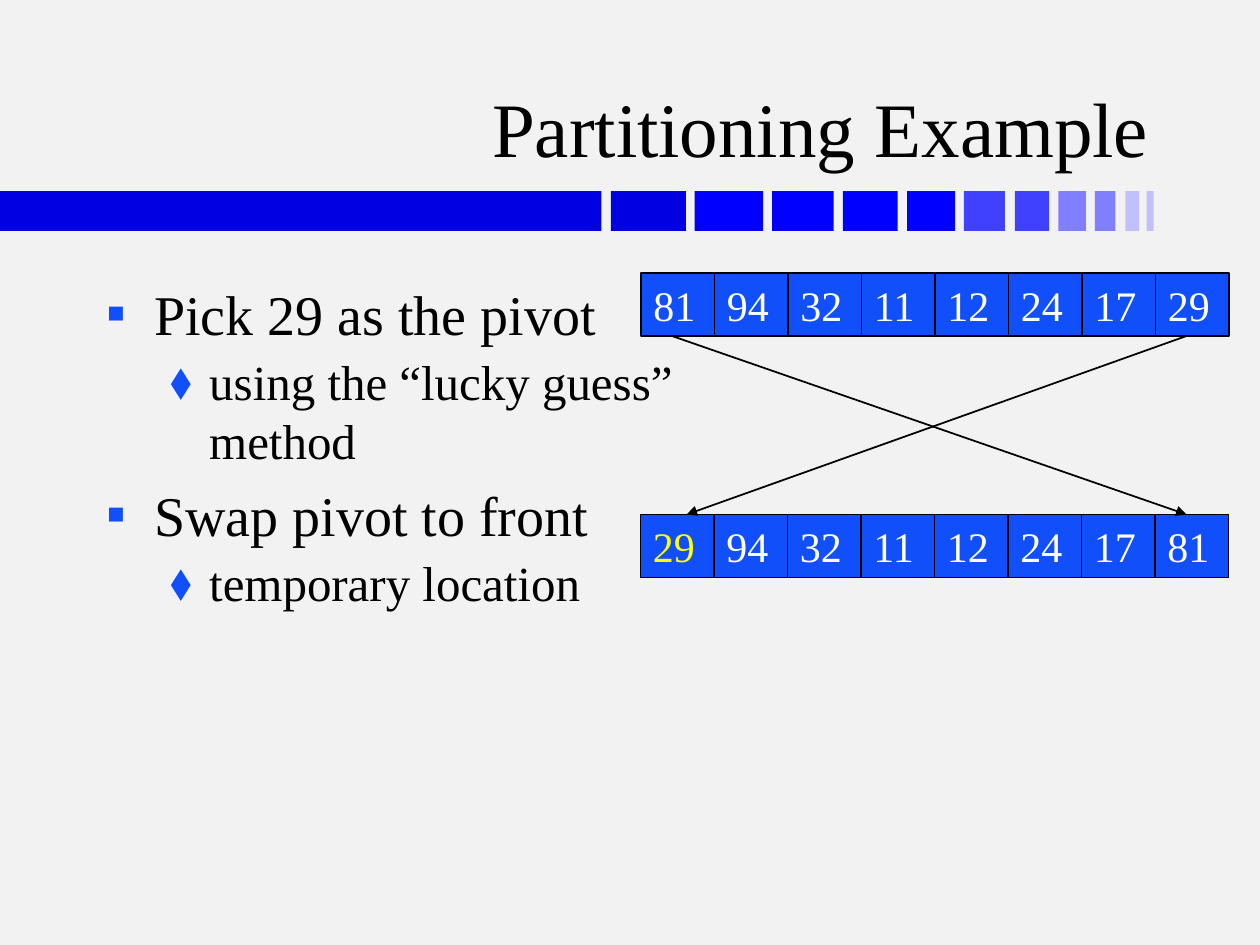
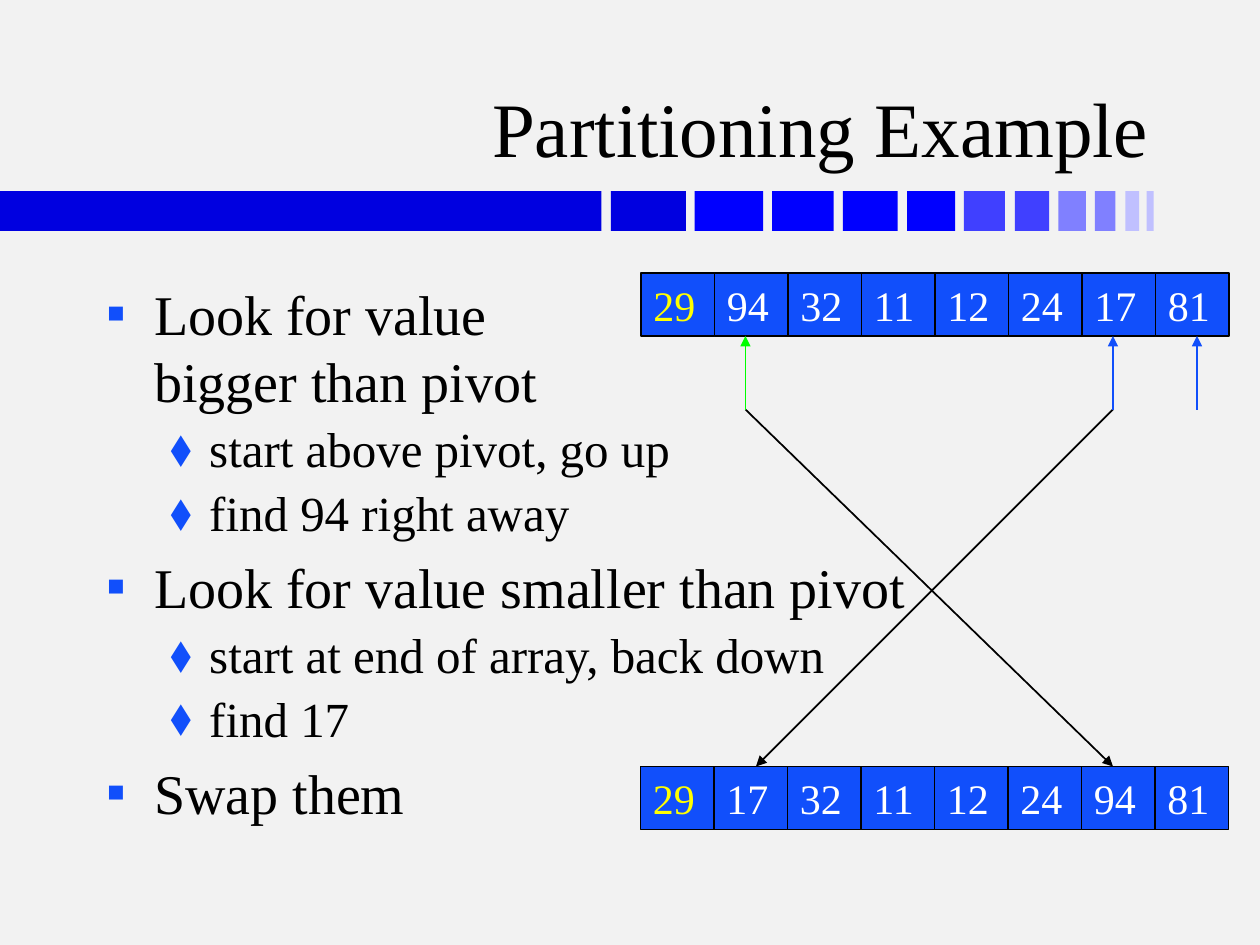
from pptx import Presentation
from pptx.util import Pt
from pptx.dml.color import RGBColor
from pptx.enum.shapes import MSO_SHAPE as Shape, MSO_CONNECTOR as Link
from pptx.enum.text import MSO_ANCHOR as Anchor, PP_ALIGN as Align
from pptx.oxml.ns import qn
from lxml.etree import SubElement as Sub

FONT = "Times New Roman"
PAPER, BLACK, WHITE = "F2F2F2", "000000", "FFFFFF"
BLUE, YELLOW, GREEN = "114FFB", "FFFF00", "00FF00"
BAND = ["0000E0"] * 2 + ["0000FF"] * 4 + ["4040FF"] * 2 + ["8080FF"] * 2 + ["C0C0FF"] * 2
LEFTS = [0, 349, 397, 441.2, 481.7, 518.4, 550.8, 580, 604.8, 625.7, 643, 655.2]
CELL_W, CELL_H = 42, 36
# Per level: size, left margin, hanging indent, space before, bullet
LEVELS = [(32, 27, 27, 6.4, "▪"), (28, 58.5, 22.5, 2.8, "⬧")]


def color(code):
    return RGBColor.from_string(code)


def add_run(para, text, size, code=BLACK):
    run = para.add_run()
    run.text = text
    run.font.name = FONT
    run.font.size = Pt(size)
    run.font.color.rgb = color(code)


def add_rect(slide, x, y, w, h, fill, line=None):
    rect = slide.shapes.add_shape(Shape.RECTANGLE, Pt(x), Pt(y), Pt(w), Pt(h))
    rect.shadow.inherit = False
    rect.fill.solid()
    rect.fill.fore_color.rgb = color(fill)
    if line:
        rect.line.color.rgb = color(line)
        rect.line.width = Pt(1)
    else:
        rect.line.fill.background()
    return rect


def add_text(slide, x, y, w, h, anchor):
    frame = slide.shapes.add_textbox(Pt(x), Pt(y), Pt(w), Pt(h)).text_frame
    frame.word_wrap = True
    frame.vertical_anchor = anchor
    return frame


def add_band(slide, y, h):
    # The first bar is long; the others shrink evenly
    for i, (x, code) in enumerate(zip(LEFTS, BAND)):
        width = 43 - 3.9 * (i - 1) if i else 343.7
        add_rect(slide, x, y, width, h, code)


def add_title(slide, text, x, y, w, h):
    para = add_text(slide, x, y, w, h, Anchor.BOTTOM).paragraphs[0]
    para.alignment = Align.RIGHT
    add_run(para, text, 44)


def add_bullet(para, margin, hang, mark):
    props = para._p.get_or_add_pPr()
    props.set("marL", str(Pt(margin)))
    props.set("indent", str(-Pt(hang)))
    tint = Sub(props, qn("a:buClr"))
    Sub(tint, qn("a:srgbClr"), val=BLUE)
    Sub(props, qn("a:buFont"), typeface=FONT)
    Sub(props, qn("a:buChar"), char=mark)


def add_body(slide, items, x, y, w, h):
    frame = add_text(slide, x, y, w, h, Anchor.TOP)
    for i, (level, text) in enumerate(items):
        para = frame.add_paragraph() if i else frame.paragraphs[0]
        size, margin, hang, before, mark = LEVELS[level]
        para.level = level
        para.space_before = Pt(before)
        add_bullet(para, margin, hang, mark)
        for j, part in enumerate(text.split("\n")):
            if j:
                para.add_line_break()
            add_run(para, part, size)


def add_array(slide, values, x, y, pivot=None):
    for i, value in enumerate(values):
        cell = add_rect(slide, x + i * CELL_W, y, CELL_W, CELL_H, BLUE, BLACK)
        frame = cell.text_frame
        frame.word_wrap = False
        frame.vertical_anchor = Anchor.MIDDLE
        para = frame.paragraphs[0]
        para.alignment = Align.LEFT
        add_run(para, str(value), 24, YELLOW if i == pivot else WHITE)


def add_arrow(slide, x1, y1, x2, y2, code=BLACK):
    arrow = slide.shapes.add_connector(Link.STRAIGHT, Pt(x1), Pt(y1), Pt(x2), Pt(y2))
    arrow.line.color.rgb = color(code)
    arrow.line.width = Pt(1)
    Sub(arrow.line._get_or_add_ln(), qn("a:tailEnd"), type="triangle")
    Sub(arrow._element.spPr, qn("a:effectLst"))


def add_slide(deck, items):
    slide = deck.slides.add_slide(deck.slide_layouts[6])
    slide.background.fill.solid()
    slide.background.fill.fore_color.rgb = color(PAPER)
    add_band(slide, 109.2, 22.8)
    add_title(slide, "Partitioning Example", 53.3, 13.7, 610.5, 88.5)
    add_body(slide, items, 54, 156, 612, 324)
    return slide


def swap_pivot(deck):
    slide = add_slide(deck, [
        (0, "Pick 29 as the pivot"),
        (1, "using the “lucky guess” \nmethod"),
        (0, "Swap pivot to front"),
        (1, "temporary location"),
    ])
    add_array(slide, [81, 94, 32, 11, 12, 24, 17, 29], 366.3, 156)
    add_array(slide, [29, 94, 32, 11, 12, 24, 17, 81], 366, 294, pivot=0)
    # Crossing arrows swap the two ends
    add_arrow(slide, 384, 192, 678, 294)
    add_arrow(slide, 678, 192, 392.4, 294)


def swap_values(deck):
    slide = add_slide(deck, [
        (0, "Look for value \nbigger than pivot"),
        (1, "start above pivot, go up"),
        (1, "find 94 right away"),
        (0, "Look for value smaller than pivot"),
        (1, "start at end of array, back down"),
        (1, "find 17"),
        (0, "Swap them"),
    ])
    add_array(slide, [29, 94, 32, 11, 12, 24, 17, 81], 366.3, 156, pivot=0)
    add_array(slide, [29, 17, 32, 11, 12, 24, 94, 81], 366, 438, pivot=0)
    # Crossing arrows swap the found values
    add_arrow(slide, 426, 234, 636, 438)
    add_arrow(slide, 636, 234, 432, 438)
    # Markers point up at the scanned cells
    for x, code in [(426, GREEN), (684, BLUE), (636, BLUE)]:
        add_arrow(slide, x, 234, x, 192, code)


def main():
    deck = Presentation()
    deck.slide_width, deck.slide_height = Pt(720), Pt(540)
    swap_pivot(deck)
    swap_values(deck)
    deck.save("out.pptx")


if __name__ == "__main__":
    main()
